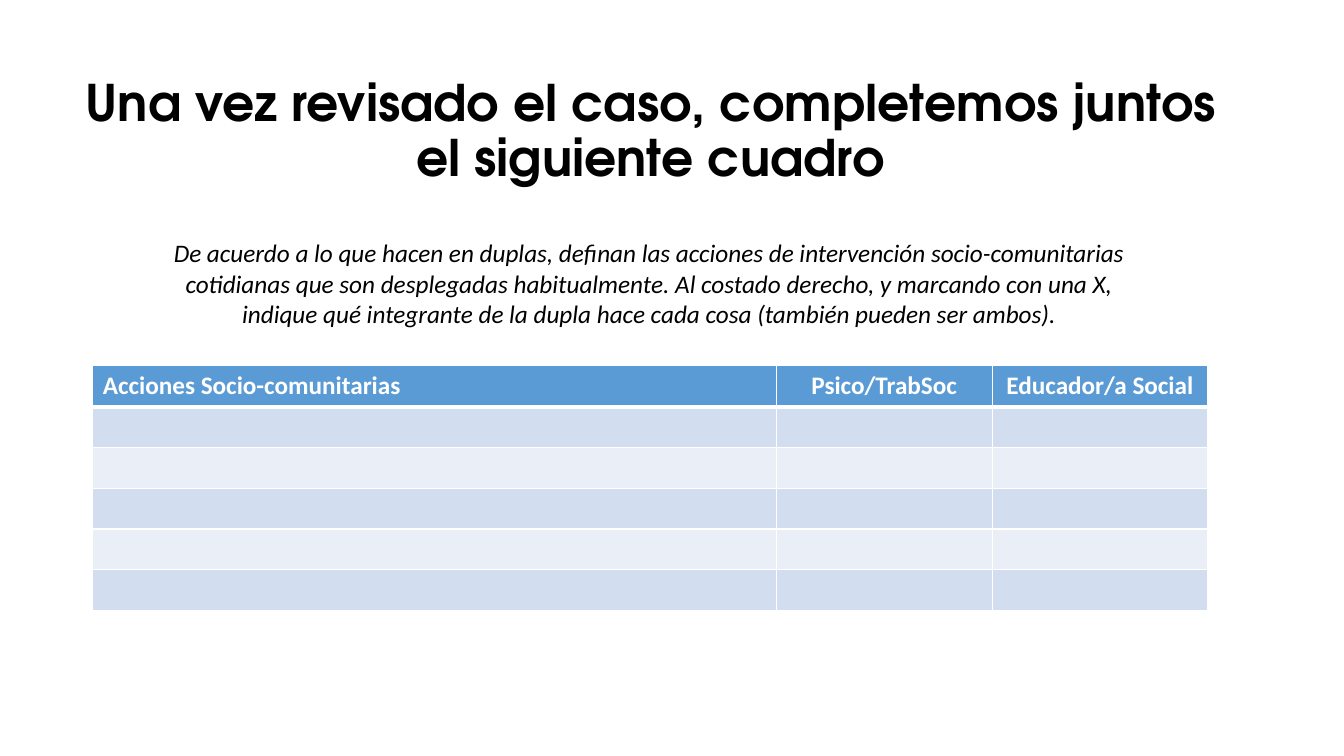
from dataclasses import dataclass

from lxml.etree import SubElement
from pptx import Presentation
from pptx.dml.color import RGBColor as RGB
from pptx.enum.text import MSO_ANCHOR as Anchor, PP_ALIGN as Align
from pptx.oxml.ns import qn
from pptx.slide import Slide
from pptx.table import _Cell as Cell
from pptx.text.text import _Paragraph as Paragraph
from pptx.util import Inches, Pt


@dataclass(frozen=True)
class Theme:
    """Colours, fonts and sizes of the slide."""
    title_font: str = "TeX Gyre Adventor"
    body_font: str = "Calibri"
    title_size: int = 36
    body_size: int = 18
    text: str = "000000"
    white: str = "FFFFFF"
    header: str = "5B9BD5"
    bands: tuple[str, str] = ("D2DEEF", "EAEFF7")
    border: int = 1
    header_border: int = 3


@dataclass(frozen=True)
class TextStyle:
    """Look of one piece of text."""
    font: str
    size: int
    color: str
    bold: bool = False
    italic: bool = False
    align: Align = Align.CENTER


@dataclass(frozen=True)
class TextBlock:
    """A text box with its place and style."""
    text: str
    left: float
    top: float
    width: float
    height: float
    style: TextStyle
    anchor: Anchor = Anchor.TOP
    spacing: float = 1.0


@dataclass(frozen=True)
class Column:
    """A table column."""
    heading: str
    width: float
    align: Align = Align.CENTER


THEME = Theme()
BLOCKS = (
    TextBlock("Una vez revisado el caso, completemos juntos el siguiente cuadro",
              0.7, 0.59, 11.5, 1.45,
              TextStyle(THEME.title_font, THEME.title_size, THEME.text, bold=True),
              Anchor.MIDDLE, 0.9),
    TextBlock("De acuerdo a lo que hacen en duplas, definan las acciones de "
              "intervención socio-comunitarias cotidianas que son desplegadas "
              "habitualmente. Al costado derecho, y marcando con una X, indique "
              "qué integrante de la dupla hace cada cosa (también pueden ser ambos).",
              1.46, 2.31, 9.96, 1.01,
              TextStyle(THEME.body_font, THEME.body_size, THEME.text, italic=True)),
)
COLUMNS = (
    Column("Acciones Socio-comunitarias", 6.78, Align.LEFT),
    Column("Psico/TrabSoc", 2.14),
    Column("Educador/a Social", 2.14),
)
TABLE_LEFT, TABLE_TOP = 0.92, 3.63
ROW_COUNT, ROW_HEIGHT = 6, 0.405


def write(p: Paragraph, text: str, style: TextStyle) -> None:
    """Put styled text into a paragraph."""
    p.text = text
    p.alignment = style.align
    for r in p.runs:
        r.font.name = style.font
        r.font.size = Pt(style.size)
        r.font.bold = style.bold
        r.font.italic = style.italic
        r.font.color.rgb = RGB.from_string(style.color)


def add_text(s: Slide, block: TextBlock) -> None:
    """Add a text box."""
    sp = s.shapes.add_textbox(Inches(block.left), Inches(block.top),
                              Inches(block.width), Inches(block.height))
    tf = sp.text_frame
    tf.word_wrap = True
    tf.vertical_anchor = block.anchor
    p = tf.paragraphs[0]
    write(p, block.text, block.style)
    p.line_spacing = block.spacing


def add_border(cell: Cell, side: str, width: int) -> None:
    """Draw one white side of a cell."""
    ln = SubElement(cell._tc.get_or_add_tcPr(), qn(f"a:ln{side}"), w=str(Pt(width)))
    fill = SubElement(ln, qn("a:solidFill"))
    SubElement(fill, qn("a:srgbClr"), val=THEME.white)


def paint_cell(cell: Cell, row: int) -> None:
    """Give a cell its borders and its fill."""
    heavy_side = {0: "B", 1: "T"}.get(row)
    for side in "LRTB":
        add_border(cell, side, THEME.header_border if side == heavy_side else THEME.border)
    cell.fill.solid()
    color = THEME.bands[(row - 1) % 2] if row else THEME.header
    cell.fill.fore_color.rgb = RGB.from_string(color)


def add_actions_table(s: Slide) -> None:
    """Add the table of actions to be filled in."""
    width = sum(column.width for column in COLUMNS)
    table = s.shapes.add_table(ROW_COUNT, len(COLUMNS), Inches(TABLE_LEFT),
                               Inches(TABLE_TOP), Inches(width),
                               Inches(ROW_COUNT * ROW_HEIGHT)).table
    for row in table.rows:
        row.height = Inches(ROW_HEIGHT)
    for i, column in enumerate(COLUMNS):
        table.columns[i].width = Inches(column.width)
        for row in range(ROW_COUNT):
            paint_cell(table.cell(row, i), row)
        style = TextStyle(THEME.body_font, THEME.body_size, THEME.white,
                          bold=True, align=column.align)
        write(table.cell(0, i).text_frame.paragraphs[0], column.heading, style)


def main() -> None:
    """Build and save the slide."""
    prs = Presentation()
    prs.slide_width, prs.slide_height = Inches(13.33), Inches(7.5)
    s = prs.slides.add_slide(prs.slide_layouts[6])
    title, instructions = BLOCKS
    add_text(s, title)
    add_actions_table(s)
    add_text(s, instructions)
    prs.save("out.pptx")


if __name__ == "__main__":
    main()
